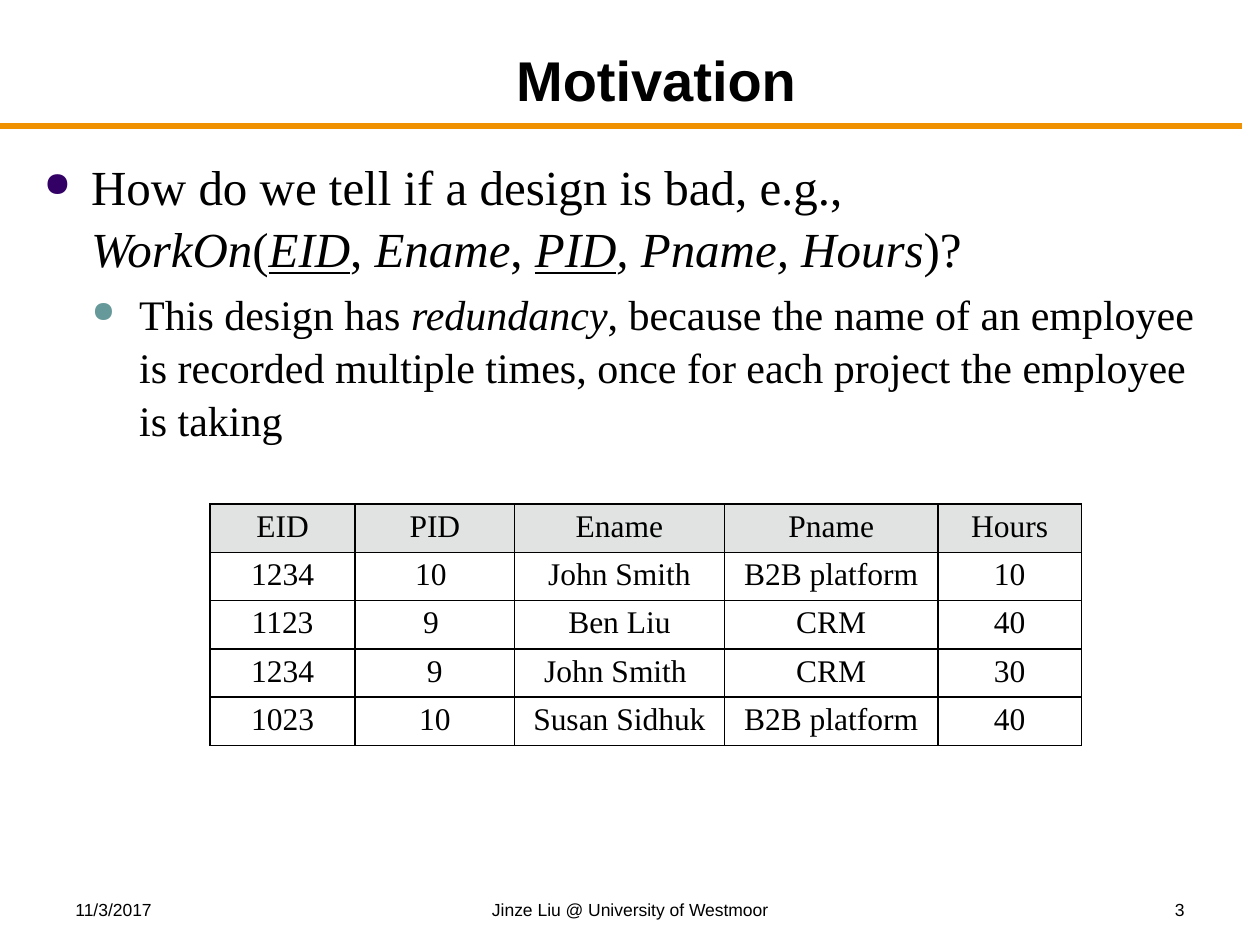
from pptx import Presentation
from pptx.dml.color import RGBColor
from pptx.enum.text import MSO_ANCHOR as Anchor, PP_ALIGN as Align
from pptx.oxml import parse_xml
from pptx.oxml.ns import nsdecls
from pptx.util import Pt


def color(code):
    return RGBColor.from_string(code)


def write(par, text, **look):
    """Add a run to the paragraph and set its font from the format values."""
    run = par.add_run()
    run.text = text
    run.font.color.rgb = color("000000")
    for key, value in look.items():
        setattr(run.font, key, value)


deck = Presentation()
deck.slide_width, deck.slide_height = Pt(720), Pt(540)
slide = deck.slides.add_slide(deck.slide_layouts[5])
shapes = slide.shapes

# Rule under the title
rule = shapes.add_connector(1, Pt(0), Pt(72), Pt(710), Pt(72))
rule.line.color.rgb = color("EF9100")
rule.line.width = Pt(3)
rule._element.spPr.append(parse_xml(f"<a:effectLst {nsdecls('a')}/>"))

# Footer
small = {"size": Pt(10), "name": "Arial"}
footer = [
    (36, 168, Align.LEFT, "11/3/2017"),
    (246, 228, Align.CENTER, "Jinze Liu @ University of Westmoor"),
    (516, 168, Align.RIGHT, "3"),
]
for left, width, align, text in footer:
    box = shapes.add_textbox(Pt(left), Pt(510), Pt(width), Pt(18))
    box.text_frame.word_wrap = True
    par = box.text_frame.paragraphs[0]
    par.alignment = align
    write(par, text, **small)

# Title
title = shapes.title
title.left, title.top, title.width, title.height = Pt(78), Pt(18), Pt(594), Pt(50)
title.text_frame.vertical_anchor = Anchor.BOTTOM
par = title.text_frame.paragraphs[0]
par.alignment = Align.CENTER
write(par, "Motivation", size=Pt(32), name="Arial", bold=True)

# Bulleted text
plain, slant = {}, {"italic": True}
key = {"italic": True, "underline": True}
points = [
    (28, 27, "330066", [
        ("How do we tell if a design is bad, e.g.,", plain), ("\n", plain),
        ("WorkOn", slant), ("(", plain), ("EID", key), (", ", plain),
        ("Ename", slant), (", ", plain), ("PID", key),
        (", Pname, Hours", slant), (")?", plain)]),
    (24, 54.5, "669999", [
        ("This design has ", plain), ("redundancy", slant),
        (", because the name of an employee is recorded multiple times, "
         "once for each project the employee is taking", plain)]),
]
body = shapes.add_textbox(Pt(18), Pt(84.5), Pt(678), Pt(272))
frame = body.text_frame
frame.word_wrap = True
for level, (size, indent, dot, runs) in enumerate(points):
    par = frame.add_paragraph() if level else frame.paragraphs[0]
    par.level = level
    par.line_spacing = 1.05
    par.space_before = Pt(size * 0.2)
    props = par._p.get_or_add_pPr()
    props.set("marL", str(Pt(indent)))
    props.set("indent", str(-Pt(27)))
    for tag in (f'<a:buClr {nsdecls("a")}><a:srgbClr val="{dot}"/></a:buClr>',
                f'<a:buSzPct {nsdecls("a")} val="70000"/>',
                f'<a:buChar {nsdecls("a")} char="●"/>'):
        props.append(parse_xml(tag))
    for text, look in runs:
        if text == "\n":
            par.add_line_break()
        else:
            write(par, text, size=Pt(size), name="Times New Roman", **look)

# Table
rows = [
    ("EID", "PID", "Ename", "Pname", "Hours"),
    ("1234", "10 ", "John Smith", "B2B platform", "10"),
    ("1123", "9 ", "Ben Liu", "CRM", "40"),
    ("1234", "9", "John Smith ", "CRM", "30"),
    ("1023", "10", "Susan Sidhuk", "B2B platform", "40"),
]
widths = [83, 91, 120, 122, 82]
high = 27.1
table = shapes.add_table(len(rows), len(widths), Pt(120), Pt(288),
                         Pt(sum(widths)), Pt(high * len(rows))).table
for col, width in zip(table.columns, widths):
    col.width = Pt(width)
for r, row in enumerate(rows):
    table.rows[r].height = Pt(high)
    for c, text in enumerate(row):
        cell = table.cell(r, c)
        cell.margin_top = cell.margin_bottom = Pt(3)
        cell.margin_left = cell.margin_right = Pt(7.2)
        par = cell.text_frame.paragraphs[0]
        par.alignment = Align.CENTER
        write(par, text, size=Pt(18), name="Times New Roman", bold=False)
        props = cell._tc.get_or_add_tcPr()
        for side in ("lnL", "lnR", "lnT", "lnB"):
            props.append(parse_xml(
                f'<a:{side} {nsdecls("a")} w="{Pt(1)}"><a:solidFill>'
                f'<a:srgbClr val="000000"/></a:solidFill></a:{side}>'))
        cell.fill.solid()
        cell.fill.fore_color.rgb = color("FFFFFF" if r else "E1E3E3")

deck.save("out.pptx")
